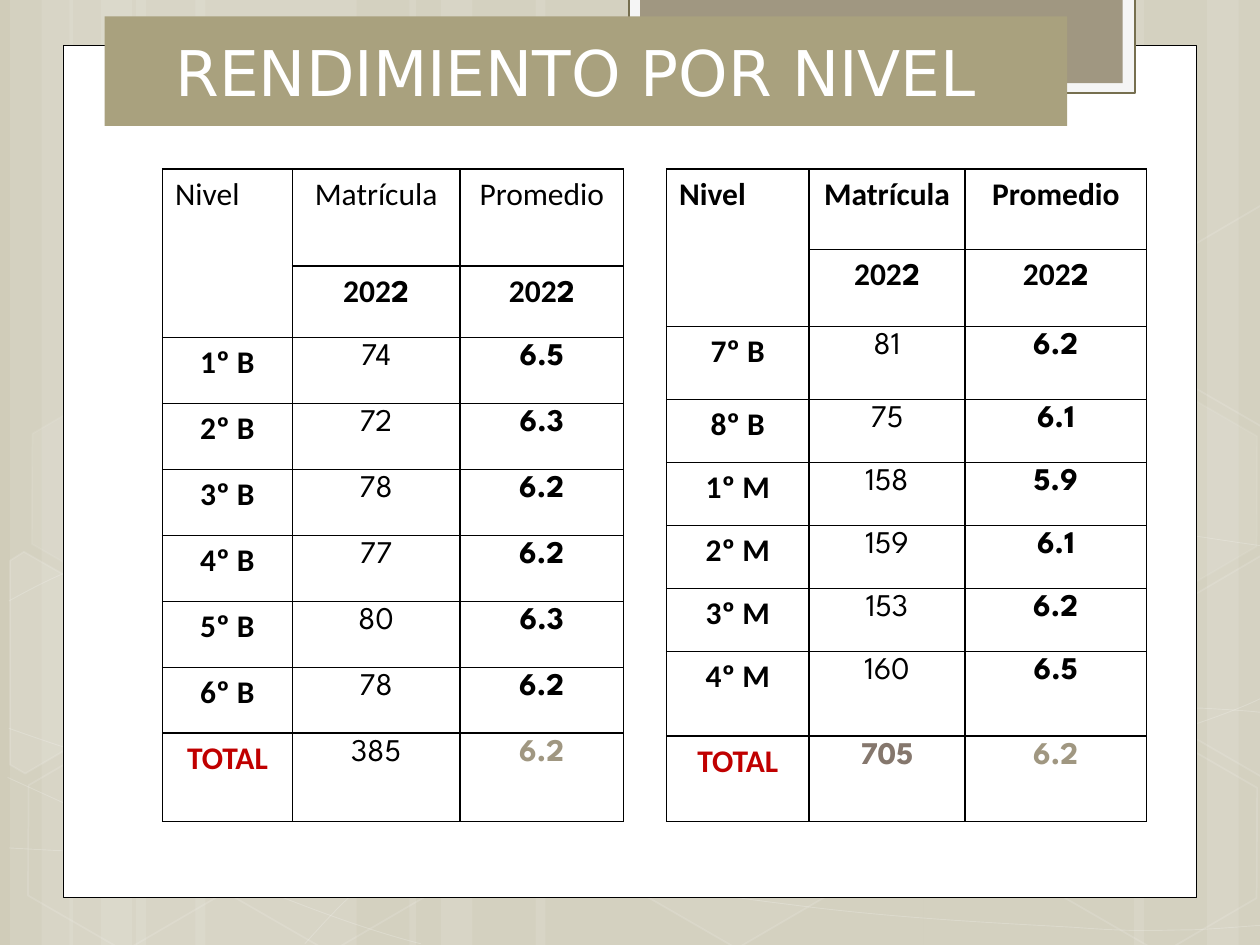
from dataclasses import dataclass

from lxml import etree
from pptx import Presentation
from pptx.dml.color import RGBColor
from pptx.enum.shapes import MSO_SHAPE
from pptx.enum.text import MSO_ANCHOR, PP_ALIGN
from pptx.oxml.ns import qn
from pptx.util import Inches, Pt

RECT, HEXAGON = MSO_SHAPE.RECTANGLE, MSO_SHAPE.HEXAGON
LEFT, CENTER, MIDDLE = PP_ALIGN.LEFT, PP_ALIGN.CENTER, MSO_ANCHOR.MIDDLE
TITLE_ONLY = 5
TABLE_TOP, TABLE_HEIGHT = 1.34, 5.18


@dataclass(frozen=True)
class Theme:
    background: str = "D0CCB9"
    white: str = "FFFFFF"
    black: str = "000000"
    title_bar: str = "A9A17E"
    tab: str = "A09781"
    tab_frame: str = "F5F5F5"
    tab_line: str = "766F4F"
    total: str = "C00000"
    total_count: str = "85776D"
    title_font: str = "DejaVu Sans"
    label_font: str = "Calibri"
    number_font: str = "League Spartan"
    title_size: int = 36
    table_size: int = 18


T = Theme()

# left, width, rotation
STRIPES = [(1.08, 1.75, 0), (0.08, 0.5, 0), (0.33, 0.83, 0), (1.55, 1.75, 0), (0.55, 0.5, 0),
           (0.8, 0.83, 0), (7.33, 1.75, 180), (9.58, 0.5, 180), (9, 0.83, 180),
           (4.25, 3.08, 0), (3.25, 0.5, 0), (3.5, 0.83, 0)]

# start point, then segments: six numbers for a cubic, two for a straight line
CURVES = [
    [(0.07, 6.73), (0.61, 6.76, 1.15, 6.79, 1.9, 6.78), (2.65, 6.77, 3.58, 6.75, 4.58, 6.65),
     (5.58, 6.55, 7, 6.36, 7.92, 6.17), (8.83, 5.98, 9.77, 5.68, 10.07, 5.51)],
    [(0.07, 4.77), (0.36, 4.61, 0.65, 4.46, 1.21, 4.31), (1.78, 4.16, 2.59, 3.94, 3.47, 3.87),
     (4.36, 3.8, 5.44, 3.79, 6.54, 3.87), (7.64, 3.95, 9.47, 4.26, 10.07, 4.34)],
    [(0.06, 6.17), (1.27, 6.72, 2.47, 7.27, 3.34, 7.49)],
    [(0.07, 5.78), (0.38, 5.89, 0.7, 6, 1.28, 6.16), (1.86, 6.31, 2.73, 6.56, 3.57, 6.73),
     (4.4, 6.9, 5.45, 7.08, 6.28, 7.18), (7.11, 7.29, 8, 7.33, 8.53, 7.36),
     (9.05, 7.4, 9.19, 7.38, 9.45, 7.38), (9.71, 7.37, 9.89, 7.35, 10.07, 7.34)],
    [(2.42, 7.49), (2.6, 7.29, 2.78, 7.09, 3.02, 6.91), (3.26, 6.73, 3.6, 6.53, 3.88, 6.39),
     (4.16, 6.25, 4.33, 6.19, 4.7, 6.09), (5.06, 5.99, 5.73, 5.85, 6.08, 5.78),
     (6.44, 5.71, 6.49, 5.71, 6.8, 5.69), (7.11, 5.66, 7.6, 5.63, 7.94, 5.62),
     (8.29, 5.61, 8.86, 5.62, 8.86, 5.62), (9.53, 5.62),
     (9.71, 5.63, 9.88, 5.64, 9.97, 5.65), (10.06, 5.66, 10.03, 5.65, 10.06, 5.66)],
]

# left, top, fill opacity, line opacity
HEXAGONS = [(3.34, 0.36, 4, 8), (4.97, 5.89, 6, 12), (0.11, 5.91, 0, 12), (0.14, 3.12, 7, 8),
            (1.74, 5.92, 0, 12), (7.53, 4.53, 10, 12), (8.34, 5.93, 0, 12), (8.34, 3.14, 7, 8)]

# fill opacity, corners
CUT_HEXAGONS = [
    (10, [(0.08, 4.45), (0.19, 4.38), (0.96, 4.82), (0.95, 5.7), (0.2, 6.14), (0.08, 6.07)]),
    (4, [(9.26, 4.85), (10.01, 4.41), (10.09, 4.46), (10.09, 6.13), (10.02, 6.17), (9.26, 5.73)]),
    (0, [(9.26, 2.07), (10.01, 1.63), (10.1, 1.68), (10.09, 3.35), (10.02, 3.39), (9.26, 2.95)]),
]

BASIC_ROWS = [("1º B", "74", "6.5"), ("2º B", "72", "6.3"), ("3º B", "78", "6.2"),
              ("4º B", "77", "6.2"), ("5º B", "80", "6.3"), ("6º B", "78", "6.2"),
              ("TOTAL", "385", "6.2")]
UPPER_ROWS = [("7º B", "81", "6.2"), ("8º B", "75", "6.1"), ("1º M", "158", "5.9"),
              ("2º M", "159", "6.1"), ("3º M", "153", "6.2"), ("4º M", "160", "6.5"),
              ("TOTAL", "705", "6.2")]


def rgb(color):
    return RGBColor.from_string(color)


def set_opacity(parent, percent):
    """Make the solid fill under an spPr or ln element translucent."""
    if percent < 100:
        color = parent.find(qn("a:solidFill")).find(qn("a:srgbClr"))
        etree.SubElement(color, qn("a:alpha"), val=str(percent * 1000))


def paint(sp, fill=None, line=None, width=1, fill_opacity=100, line_opacity=100):
    sp.shadow.inherit = False
    if fill and fill_opacity:
        sp.fill.solid()
        sp.fill.fore_color.rgb = rgb(fill)
        set_opacity(sp._element.spPr, fill_opacity)
    else:
        sp.fill.background()
    if line:
        sp.line.color.rgb = rgb(line)
        sp.line.width = Pt(width)
        set_opacity(sp._element.spPr.find(qn("a:ln")), line_opacity)
    else:
        sp.line.fill.background()


def add_preset(shapes, kind, box, **colors):
    sp = shapes.add_shape(kind, *map(Inches, box))
    paint(sp, **colors)
    return sp


def add_outline(shapes, points, close, **colors):
    points = [(Inches(x), Inches(y)) for x, y in points]
    builder = shapes.build_freeform(*points[0])
    builder.add_line_segments(points[1:], close=close)
    sp = builder.convert_to_shape()
    paint(sp, **colors)
    return sp


def add_curve(shapes, start, *segments, **colors):
    """Draw the control polygon, then turn each three of its lines into one cubic."""
    points = [start] + [seg[i:i + 2] for seg in segments for i in range(0, len(seg), 2)]
    sp = add_outline(shapes, points, False, **colors)
    lines = iter(list(sp._element.iter(qn("a:lnTo"))))
    for seg in segments:
        parts = [next(lines) for _ in range(len(seg) // 2)]
        if len(parts) == 3:
            cubic = etree.Element(qn("a:cubicBezTo"))
            parts[0].addprevious(cubic)
            for part in parts:
                cubic.append(part[0])
                part.getparent().remove(part)


def add_backdrop(s):
    s.background.fill.solid()
    s.background.fill.fore_color.rgb = rgb(T.background)
    decor = s.shapes.add_group_shape().shapes
    for left, width, rotation in STRIPES:
        sp = add_preset(decor, RECT, (left, 0, width, 7.5), fill=T.white, fill_opacity=10)
        sp.rotation = rotation
    for curve in CURVES:
        add_curve(decor, *curve, line=T.white, width=0.5, line_opacity=20)
    for left, top, fill_opacity, line_opacity in HEXAGONS:
        sp = add_preset(decor, HEXAGON, (left, top, 1.75, 1.52), fill=T.white, line=T.white,
                        fill_opacity=fill_opacity, line_opacity=line_opacity)
        sp.adjustments[0] = 0.285
        sp.rotation = 30
    for opacity, corners in CUT_HEXAGONS:
        add_outline(decor, corners, True, fill=T.white, line=T.white,
                    fill_opacity=opacity, line_opacity=12)
    for box, colors in [
        ((0.5, 0.36, 9, 6.76), {"fill": T.white, "line": T.black, "width": 0.5}),
        ((4.99, -0.02, 4.02, 0.76), {"fill": T.tab_frame, "line": T.tab_line, "width": 1.25}),
        ((5.08, -0.02, 3.83, 0.68), {"fill": T.tab}),
    ]:
        add_preset(s.shapes, RECT, box, **colors)


def add_run(p, text, size=T.table_size, name=T.label_font, bold=False, color=T.black):
    r = p.add_run()
    r.text = text
    for key, value in {"size": Pt(size), "name": name, "bold": bold}.items():
        setattr(r.font, key, value)
    r.font.color.rgb = rgb(color)


def set_title(s, text):
    title = s.shapes.title
    box = {"left": 0.83, "top": 0.13, "width": 7.64, "height": 0.87}
    for key, value in box.items():
        setattr(title, key, Inches(value))
    title.fill.solid()
    title.fill.fore_color.rgb = rgb(T.title_bar)
    tf = title.text_frame
    tf.vertical_anchor = MIDDLE
    tf.paragraphs[0].alignment = CENTER
    add_run(tf.paragraphs[0], text, T.title_size, T.title_font, color=T.white)
    s.shapes._spTree.append(title._element)


def rule_cell(cell):
    """Give a cell black rules on all sides and no fill."""
    tc_pr = cell._tc.get_or_add_tcPr()
    for side in ("lnL", "lnR", "lnT", "lnB"):
        ln = etree.SubElement(tc_pr, qn(f"a:{side}"), w=str(Pt(1)))
        fill = etree.SubElement(ln, qn("a:solidFill"))
        etree.SubElement(fill, qn("a:srgbClr"), val=T.black)
    cell.fill.background()


def write_cell(cell, *runs, align=CENTER):
    """Fill a cell with runs, each a text and its format values."""
    p = cell.text_frame.paragraphs[0]
    p.alignment = align
    for text, values in runs:
        add_run(p, text, **values)


def add_level_table(s, left, widths, heights, rows, head_bold, count_total):
    box = (left, TABLE_TOP, sum(widths), TABLE_HEIGHT)
    table = s.shapes.add_table(len(heights), len(widths), *map(Inches, box)).table
    table.first_row = table.horz_banding = False
    for column, width in zip(table.columns, widths):
        column.width = Inches(width)
    for row, height in zip(table.rows, heights):
        row.height = Inches(height)
    for cell in table.iter_cells():
        rule_cell(cell)
    table.cell(0, 0).merge(table.cell(1, 0))
    for c, head in enumerate(("Nivel", "Matrícula", "Promedio")):
        write_cell(table.cell(0, c), (head, {"bold": head_bold}), align=CENTER if c else LEFT)
        if c:
            write_cell(table.cell(1, c), ("202", {"bold": True}),
                       ("2", {"bold": True, "name": T.number_font}))
    for i, row in enumerate(rows, start=2):
        formats = [{"bold": True}, {"name": T.number_font}, {"name": T.number_font, "bold": True}]
        if row[0] == "TOTAL":
            for values, extra in zip(formats, ({"color": T.total}, count_total, {"color": T.tab})):
                values.update(extra)
        for c, run in enumerate(zip(row, formats)):
            write_cell(table.cell(i, c), run)


def main():
    prs = Presentation()
    prs.slide_width, prs.slide_height = Inches(10), Inches(7.5)
    s = prs.slides.add_slide(prs.slide_layouts[TITLE_ONLY])
    add_backdrop(s)
    head, years, total = 0.77, 0.57, 0.7
    level = (TABLE_HEIGHT - head - years - total) / 6
    add_level_table(s, 1.29, [1.03, 1.33, 1.3], [head, years] + [level] * 6 + [total],
                    BASIC_ROWS, False, {})
    set_title(s, "RENDIMIENTO POR NIVEL ")
    add_level_table(s, 5.29, [1.13, 1.24, 1.44], [0.64, 0.61, 0.58] + [0.5] * 4 + [0.67, 0.68],
                    UPPER_ROWS, True, {"bold": True, "color": T.total_count})
    prs.save("out.pptx")


if __name__ == "__main__":
    main()
